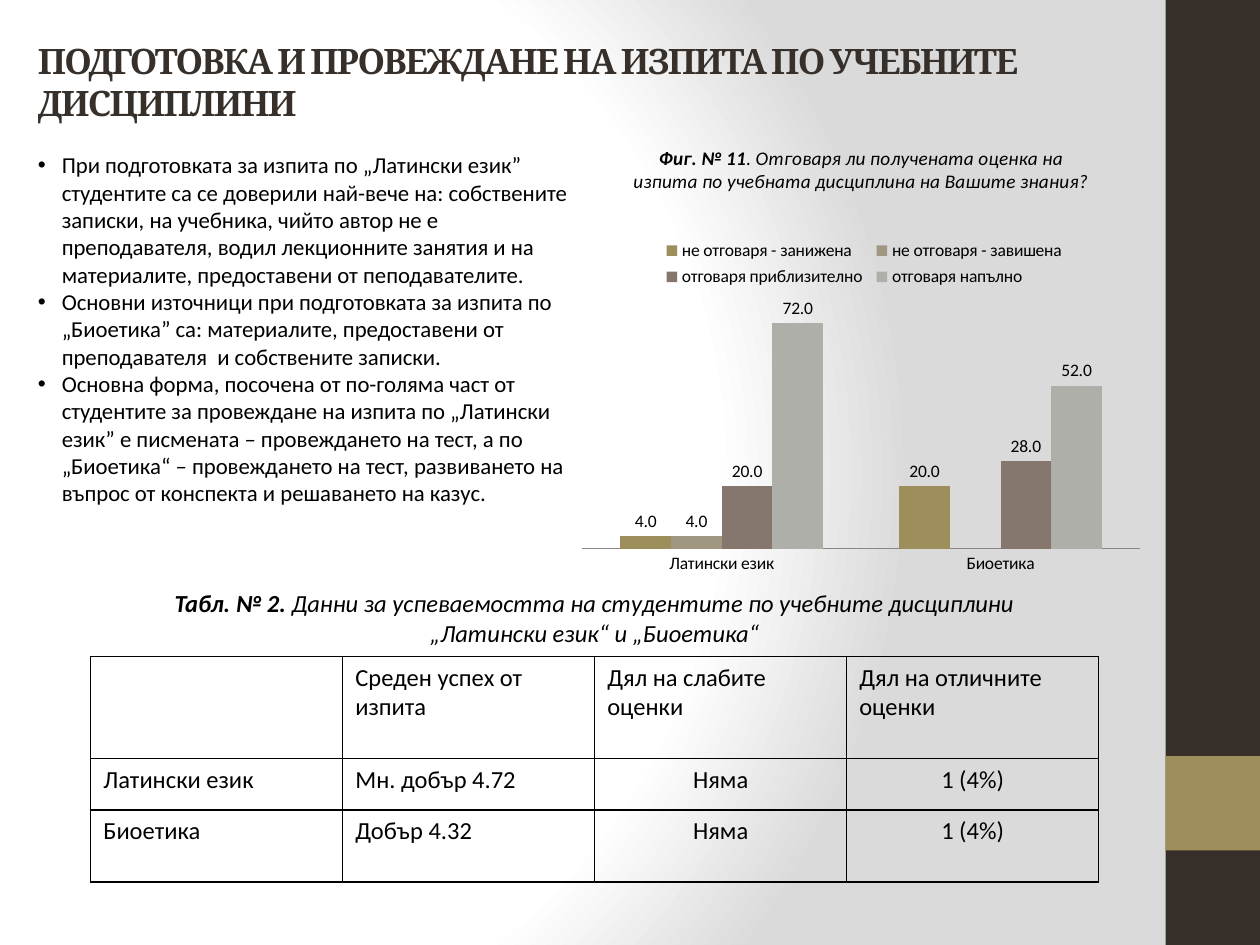
from pptx import Presentation
from pptx.chart.data import CategoryChartData
from pptx.dml.color import RGBColor
from pptx.enum.chart import XL_CHART_TYPE, XL_LABEL_POSITION, XL_LEGEND_POSITION, XL_TICK_MARK
from pptx.enum.shapes import MSO_SHAPE
from pptx.enum.text import MSO_ANCHOR, MSO_AUTO_SIZE, PP_ALIGN
from pptx.oxml import parse_xml
from pptx.oxml.ns import nsdecls, qn
from pptx.util import Inches, Pt

COLUMNS = XL_CHART_TYPE.COLUMN_CLUSTERED
OUTSIDE_END = XL_LABEL_POSITION.OUTSIDE_END
LEGEND_TOP = XL_LEGEND_POSITION.TOP
NO_TICKS = XL_TICK_MARK.NONE
RECTANGLE = MSO_SHAPE.RECTANGLE
MIDDLE = MSO_ANCHOR.MIDDLE
NO_AUTOFIT = MSO_AUTO_SIZE.NONE
LEFT, CENTER = PP_ALIGN.LEFT, PP_ALIGN.CENTER

DARK, GOLD, BLACK = "37302A", "9E8E5C", "000000"
TITLE_FONT = {"name": "Cambria", "size": Pt(20), "bold": True}
BODY_FONT = {"name": "Calibri", "size": Pt(13)}
TABLE_FONT = {"name": "Calibri", "size": Pt(14), "bold": False}
CAPTION_FONT = {"name": "Calibri", "size": Pt(14), "italic": True}
CHART_FONT = {"name": "Calibri", "size": Pt(10)}
CHART_TITLE_FONT = {"name": "Calibri", "size": Pt(11), "italic": True}

TITLE = "ПОДГОТОВКА И ПРОВЕЖДАНЕ НА ИЗПИТА ПО УЧЕБНИТЕ ДИСЦИПЛИНИ"
FINDINGS = [
    "При подготовката за изпита по „Латински език” студентите са се доверили най-вече на: "
    "собствените записки, на учебника, чийто автор не е преподавателя, водил лекционните "
    "занятия и на материалите, предоставени от пеподавателите.",
    "Основни източници при подготовката за изпита по „Биоетика” са: материалите, "
    "предоставени от преподавателя  и собствените записки.",
    "Основна форма, посочена от по-голяма част от студентите за провеждане на изпита по "
    "„Латински език” е писмената – провеждането на тест, а по „Биоетика“ – провеждането на "
    "тест, развиването на въпрос от конспекта и решаването на казус.",
]
CHART_TITLE = ("Фиг. № 11", ". Отговаря ли получената оценка на изпита по учебната "
               "дисциплина на Вашите знания?")
TABLE_CAPTION = ("Табл. № 2.", " Данни за успеваемостта на студентите по учебните "
                 "дисциплини „Латински език“ и „Биоетика“")
SUBJECTS = ["Латински език", "Биоетика"]
ANSWERS = [
    ("не отговаря - занижена", (4, 20), GOLD),
    ("не отговаря - завишена", (4, None), "A09781"),
    ("отговаря приблизително", (20, 28), "85776D"),
    ("отговаря напълно", (72, 52), "AEAFA9"),
]
RESULTS = [
    ["", "Среден успех от изпита", "Дял на слабите оценки", "Дял на отличните оценки"],
    ["Латински език", "Мн. добър 4.72", "Няма", "1 (4%)"],
    ["Биоетика", "Добър 4.32", "Няма", "1 (4%)"],
]
ROW_HEIGHTS = [0.81, 0.41, 0.57]


def color(value):
    return RGBColor.from_string(value)


def format_font(font, values, font_color=BLACK):
    for name, value in values.items():
        setattr(font, name, value)
    font.color.rgb = color(font_color)


def place(shape, left, top, width, height):
    box = {"left": left, "top": top, "width": width, "height": height}
    for name, value in box.items():
        setattr(shape, name, Inches(value))


def set_background(slide):
    """Fill the background with a round gradient from white to grey."""
    stops = "".join(
        f'<a:gs pos="{position}"><a:srgbClr val="{value}"/></a:gs>'
        for position, value in ((0, "FFFFFF"), (75000, "FFFFFF"), (100000, "DADADA")))
    slide.element.cSld.insert(0, parse_xml(
        f'<p:bg {nsdecls("p", "a")}><p:bgPr><a:gradFill><a:gsLst>{stops}</a:gsLst>'
        '<a:path path="circle"><a:fillToRect l="20000" t="50000" r="100000" b="50000"/>'
        '</a:path></a:gradFill><a:effectLst/></p:bgPr></p:bg>'))


def add_side_block(slide, top, height, fill):
    block = slide.shapes.add_shape(
        RECTANGLE, Inches(9.25), Inches(top), Inches(0.75), Inches(height))
    block.shadow.inherit = False
    block.fill.solid()
    block.fill.fore_color.rgb = color(fill)
    block.line.fill.background()
    return block


def fill_title(title):
    place(title, 0.2, 0.21, 9.61, 0.87)
    frame = title.text_frame
    frame.auto_size = NO_AUTOFIT
    frame.vertical_anchor = MIDDLE
    paragraph = frame.paragraphs[0]
    paragraph.alignment = LEFT
    run = paragraph.add_run()
    run.text = TITLE
    format_font(run.font, TITLE_FONT, DARK)
    run.font._element.set("spc", "-100")


def fill_bullets(body):
    place(body, 0.2, 1.15, 4.41, 2.91)
    frame = body.text_frame
    frame.text = "\n".join(FINDINGS)
    frame.auto_size = NO_AUTOFIT
    for paragraph in frame.paragraphs:
        paragraph.space_before = Pt(0)
        properties = paragraph._p.get_or_add_pPr()
        properties.set("marL", str(Inches(0.19)))
        properties.set("indent", str(-Inches(0.19)))
        format_font(paragraph.runs[0].font, BODY_FONT)


def write_caption(paragraph, parts, font_values):
    """Write a bold number followed by plain caption text, centred."""
    paragraph.alignment = CENTER
    for text, bold in zip(parts, (True, False)):
        run = paragraph.add_run()
        run.text = text
        format_font(run.font, {**font_values, "bold": bold})


def add_table_caption(slide):
    box = slide.shapes.add_textbox(Inches(0.98), Inches(4.62), Inches(7.48), Inches(0.57))
    box.text_frame.word_wrap = True
    write_caption(box.text_frame.paragraphs[0], TABLE_CAPTION, CAPTION_FONT)


def set_borders(cell):
    properties = cell._tc.get_or_add_tcPr()
    for index, side in enumerate("LRTB"):
        properties.insert(index, parse_xml(
            f'<a:ln{side} {nsdecls("a")} w="{Pt(1)}"><a:solidFill>'
            f'<a:srgbClr val="{BLACK}"/></a:solidFill></a:ln{side}>'))


def add_results_table(slide):
    table = slide.shapes.add_table(
        len(RESULTS), len(RESULTS[0]), Inches(0.72), Inches(5.21),
        Inches(8), Inches(sum(ROW_HEIGHTS))).table
    table.first_row = table.horz_banding = False
    for row, height in zip(table.rows, ROW_HEIGHTS):
        row.height = Inches(height)
    for row_index, texts in enumerate(RESULTS):
        for column_index, text in enumerate(texts):
            cell = table.cell(row_index, column_index)
            cell.text = text
            cell.fill.background()
            set_borders(cell)
            paragraph = cell.text_frame.paragraphs[0]
            format_font(paragraph.font, TABLE_FONT)
            for run in paragraph.runs:
                format_font(run.font, TABLE_FONT)
            if row_index > 0 and column_index > 1:
                paragraph.alignment = CENTER


def set_chart_layout(element, index, target, x, y, w, h):
    """Fix a chart part at fractions of the chart's size."""
    for layout in element.findall(qn("c:layout")):
        element.remove(layout)
    sizes = "".join(f'<c:{name} val="{value}"/>'
                    for name, value in (("x", x), ("y", y), ("w", w), ("h", h)))
    element.insert(index, parse_xml(
        f'<c:layout {nsdecls("c")}><c:manualLayout>{target}<c:xMode val="edge"/>'
        f'<c:yMode val="edge"/>{sizes}</c:manualLayout></c:layout>'))


def add_grades_chart(slide):
    data = CategoryChartData(number_format="0.0")
    data.categories = SUBJECTS
    for name, values, _ in ANSWERS:
        data.add_series(name, values)
    chart = slide.shapes.add_chart(
        COLUMNS, Inches(4.53), Inches(0.99), Inches(4.61), Inches(3.62), data).chart
    format_font(chart.font, CHART_FONT)
    write_caption(chart.chart_title.text_frame.paragraphs[0], CHART_TITLE, CHART_TITLE_FONT)

    chart.has_legend = True
    chart.legend.position = LEGEND_TOP
    chart.legend.include_in_layout = False
    set_chart_layout(chart.legend._element, 1, "", 0.15, 0.24, 0.71, 0.13)
    plot_area = chart._chartSpace.chart.plotArea
    set_chart_layout(plot_area, 0, '<c:layoutTarget val="inner"/>', 0.02, 0.38, 0.96, 0.55)

    chart.value_axis.visible = False
    chart.value_axis.has_major_gridlines = False
    chart.value_axis.minimum_scale = 0
    chart.value_axis.maximum_scale = 80
    chart.category_axis.major_tick_mark = NO_TICKS
    chart.category_axis.format.line.color.rgb = color("8A8687")

    plot = chart.plots[0]
    plot.gap_width, plot.overlap, plot.vary_by_categories = 150, 0, False
    for series, (_, _, fill) in zip(plot.series, ANSWERS):
        series.format.fill.solid()
        series.format.fill.fore_color.rgb = color(fill)
        labels = series.data_labels
        label_values = {"show_value": True, "number_format": "0.0",
                        "number_format_is_linked": False, "position": OUTSIDE_END}
        for name, value in label_values.items():
            setattr(labels, name, value)


def main():
    presentation = Presentation()
    presentation.slide_width, presentation.slide_height = Inches(10), Inches(7.5)
    slide = presentation.slides.add_slide(presentation.slide_layouts[1])
    set_background(slide)
    blocks = [add_side_block(slide, 0, 7.5, DARK), add_side_block(slide, 6, 0.75, GOLD)]
    for index, block in enumerate(blocks, start=2):
        slide.shapes._spTree.insert(index, block._element)
    fill_title(slide.shapes.title)
    fill_bullets(slide.placeholders[1])
    add_results_table(slide)
    add_table_caption(slide)
    add_grades_chart(slide)
    presentation.save("out.pptx")


if __name__ == "__main__":
    main()
